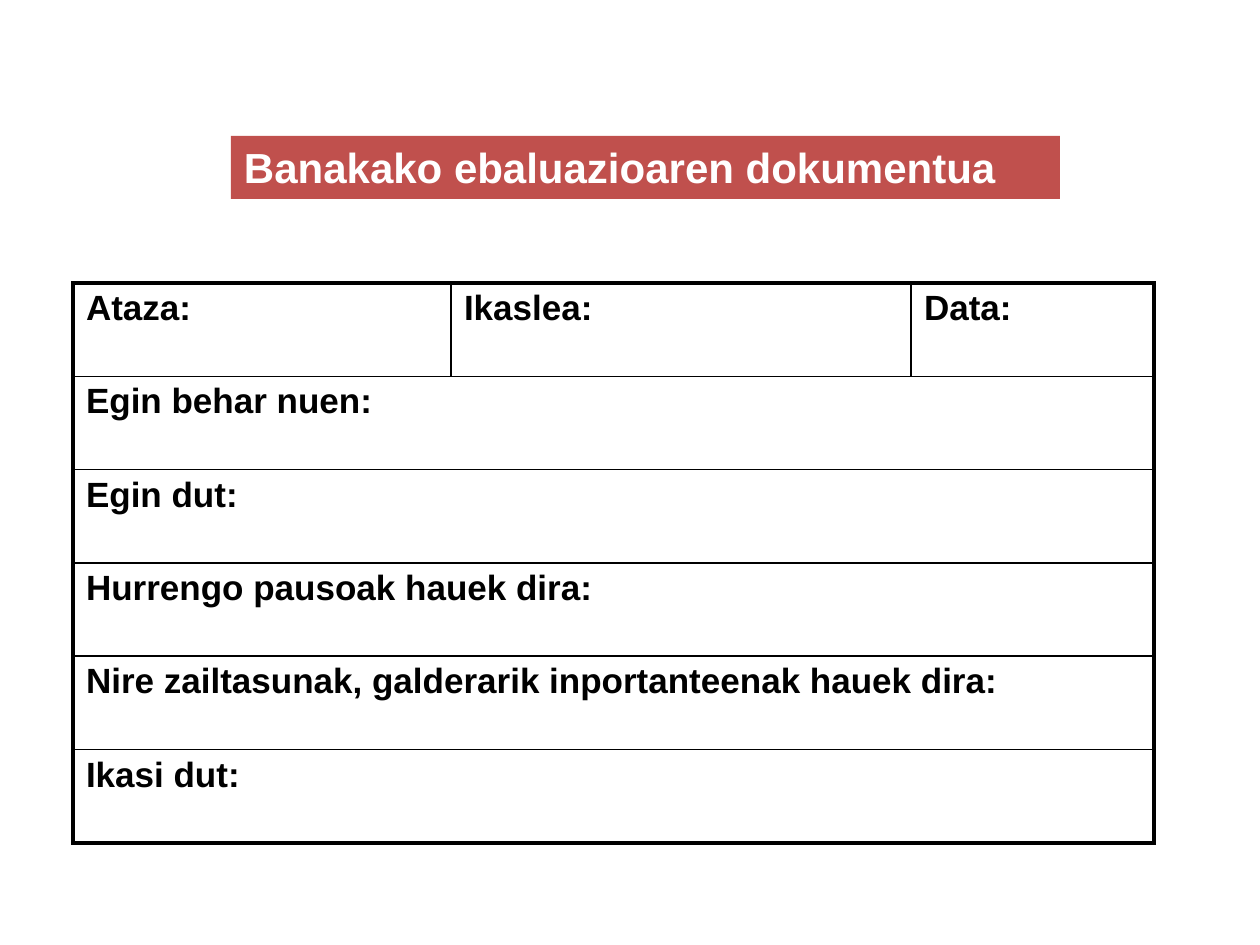
from lxml import etree
from pptx import Presentation, util as u
from pptx.dml.color import RGBColor
from pptx.enum import shapes, text
from pptx.oxml.ns import qn

SCALE = 914400 / 126  # EMU per px
FRAME = {"margin_left": 13, "margin_right": 13, "margin_top": 6, "margin_bottom": 6}
THICK, THIN = 2.25, 1


def write(frame, words, size, color):
    para = frame.paragraphs[0]
    para.alignment = text.PP_ALIGN.LEFT
    span = para.add_run()
    span.text = words
    span.font.color.rgb = RGBColor.from_string(color)
    for name, value in {"name": "Arial", "size": u.Pt(size), "bold": True}.items():
        setattr(span.font, name, value)


def draw_borders(cell, widths):
    """Set borders from (tag, points) pairs given in schema order: L, R, T, B."""
    props = cell._tc.get_or_add_tcPr()
    for index, (side, points) in enumerate(widths):
        line = etree.Element(qn(f"a:ln{side}"), w=str(u.Pt(points)))
        fill = etree.SubElement(line, qn("a:solidFill"))
        etree.SubElement(fill, qn("a:srgbClr"), val="000000")
        props.insert(index, line)


deck = Presentation()
deck.slide_width, deck.slide_height = u.Inches(10), u.Inches(7.5)
page = deck.slides.add_slide(deck.slide_layouts[6])

# Title band
band = [round(px * SCALE) for px in (231, 136, 829, 63)]
title = page.shapes.add_shape(shapes.MSO_SHAPE.RECTANGLE, *band)
title.shadow.inherit = False
title.fill.solid()
title.fill.fore_color.rgb = RGBColor.from_string("C0504D")
title.line.fill.background()
for name, px in FRAME.items():
    setattr(title.text_frame, name, round(px * SCALE))
title.text_frame.word_wrap = True
title.text_frame.vertical_anchor = text.MSO_ANCHOR.TOP
write(title.text_frame, "Banakako ebaluazioaren dokumentua", 24, "FFFFFF")

# Form: a header row of three fields, then one full-width field per row
fields = [
    ["Ataza:", "Ikaslea:", "Data:"],
    ["Egin behar nuen:"],
    ["Egin dut:"],
    ["Hurrengo pausoak hauek dira:"],
    ["Nire zailtasunak, galderarik inportanteenak hauek dira:"],
    ["Ikasi dut:"],
]
columns = [378, 460, 243]
place = [round(px * SCALE) for px in (73, 283, sum(columns), 560)]
form = page.shapes.add_table(len(fields), len(columns), *place).table
form.first_row = form.horz_banding = False
for column, px in zip(form.columns, columns):
    column.width = round(px * SCALE)

last_row, last_column = len(fields) - 1, len(columns) - 1
for r, labels in enumerate(fields):
    if len(labels) == 1:
        form.cell(r, 0).merge(form.cell(r, last_column))
    for c, label in enumerate(labels):
        cell = form.cell(r, c)
        cell.fill.background()
        for name, px in FRAME.items():
            setattr(cell, name, round(px * SCALE))
        write(cell.text_frame, label, 20, "000000")
        draw_borders(cell, [
            ("L", THICK if c == 0 else THIN),
            ("R", THICK if c == len(labels) - 1 else THIN),
            ("T", THICK if r == 0 else THIN),
            ("B", THICK if r == last_row else THIN),
        ])
    for c in range(len(labels), len(columns)):
        form.cell(r, c).fill.background()

deck.save("out.pptx")
